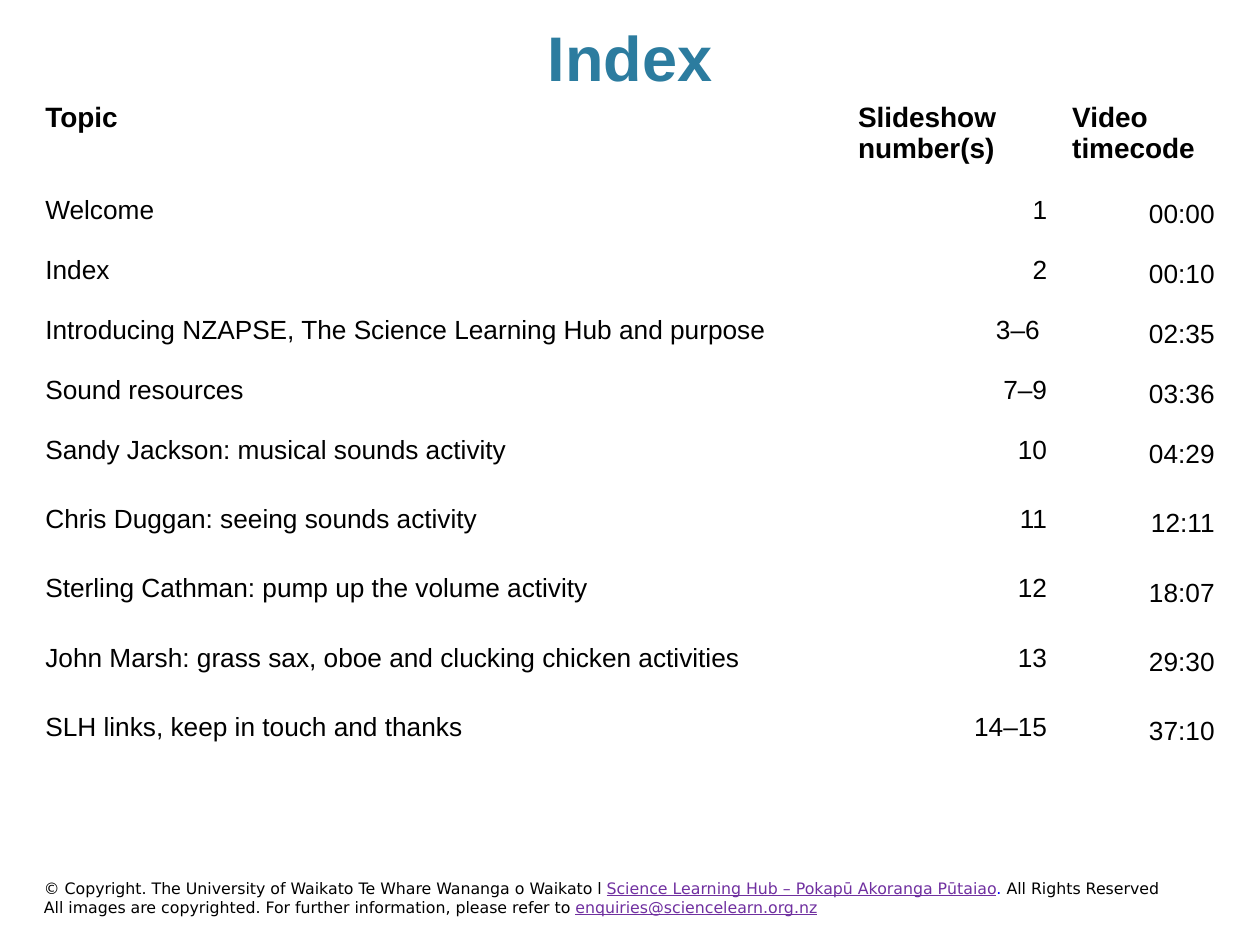
from dataclasses import dataclass

from pptx import Presentation
from pptx.dml.color import RGBColor
from pptx.enum.text import MSO_ANCHOR as Anchor, PP_ALIGN as Align
from pptx.util import Pt


@dataclass(frozen=True)
class Theme:
    font: str = "Arial"
    footer_font: str = "DejaVu Sans"
    title_color: RGBColor = RGBColor(0x2C, 0x7C, 0x9F)
    text_color: RGBColor = RGBColor(0, 0, 0)
    link_color: RGBColor = RGBColor(0x70, 0x30, 0xA0)
    stop_color: RGBColor = RGBColor(0, 0, 0xFF)
    title_size: float = 36
    header_size: float = 16
    body_size: float = 15
    footer_size: float = 9
    inset: float = 7.2


THEME = Theme()

HEADERS = ("Topic", "Slideshow number(s)", "Video timecode")
TOPICS = (
    ("Welcome", "1", "00:00"),
    ("Index", "2", "00:10"),
    ("Introducing NZAPSE, The Science Learning Hub and purpose", "3–6 ", "02:35"),
    ("Sound resources", "7–9", "03:36"),
    ("Sandy Jackson: musical sounds activity", "10", "04:29"),
    ("Chris Duggan: seeing sounds activity", "11", "12:11"),
    ("Sterling Cathman: pump up the volume activity", "12", "18:07"),
    ("John Marsh: grass sax, oboe and clucking chicken activities", "13", "29:30"),
    ("SLH links, keep in touch and thanks", "14–15", "37:10"),
)
EMPTY_ROWS = 2
COLUMN_WIDTHS = (464.4, 122.4, 95.76)
ROW_HEIGHTS = (53.3, *[34.3] * 4, *[39.6] * 6, 34.3)

FOOTER = (
    (
        ("© Copyright. The University of Waikato Te Whare Wananga o Waikato l ",
         THEME.text_color),
        ("Science Learning Hub – Pokapū Akoranga Pūtaiao", THEME.link_color),
        (". ", THEME.stop_color),
        ("All Rights Reserved", THEME.text_color),
    ),
    (
        ("All images are copyrighted. For further information, please refer to ",
         THEME.text_color),
        ("enquiries@sciencelearn.org.nz", THEME.link_color),
    ),
)


def set_font(font, name, size, color=None, bold=False):
    font.name, font.size, font.bold = name, Pt(size), bold
    if color is not None:
        font.color.rgb = color


def set_insets(target, inset):
    target.margin_left = target.margin_right = Pt(inset)
    target.margin_top = target.margin_bottom = Pt(inset)


def add_title(slide, left, top, width, height):
    title = slide.shapes.title
    title.left, title.top = Pt(left), Pt(top)
    title.width, title.height = Pt(width), Pt(height)
    title.text_frame.vertical_anchor = Anchor.MIDDLE
    title.text_frame.text = "Index"
    paragraph = title.text_frame.paragraphs[0]
    paragraph.alignment = Align.CENTER
    set_font(paragraph.font, THEME.font, THEME.title_size, THEME.title_color, True)


def add_index_table(slide, left, top):
    rows = (HEADERS, *TOPICS, *[("", "", "")] * EMPTY_ROWS)
    table = slide.shapes.add_table(
        len(rows), len(HEADERS), Pt(left), Pt(top),
        Pt(sum(COLUMN_WIDTHS)), Pt(sum(ROW_HEIGHTS))).table
    table.first_row = table.horz_banding = False
    for column, width in zip(table.columns, COLUMN_WIDTHS):
        column.width = Pt(width)
    for row, height in zip(table.rows, ROW_HEIGHTS):
        row.height = Pt(height)

    for row_index, texts in enumerate(rows):
        is_header = row_index == 0
        size = THEME.header_size if is_header else THEME.body_size
        for column_index, text in enumerate(texts):
            cell = table.cell(row_index, column_index)
            cell.fill.background()
            set_insets(cell, THEME.inset)
            cell.text = text
            paragraph = cell.text_frame.paragraphs[0]
            set_font(paragraph.font, THEME.font, size, THEME.text_color, is_header)
            # Numbers and timecodes sit on the right
            if column_index > 0 and not is_header:
                paragraph.alignment = Align.RIGHT
            if column_index == 2 and text and not is_header:
                paragraph.line_spacing = 1.15


def add_footer(slide, left, top, width, height):
    box = slide.shapes.add_textbox(Pt(left), Pt(top), Pt(width), Pt(height))
    frame = box.text_frame
    frame.word_wrap = True
    frame.vertical_anchor = Anchor.MIDDLE
    set_insets(frame, THEME.inset)
    for index, parts in enumerate(FOOTER):
        paragraph = frame.add_paragraph() if index else frame.paragraphs[0]
        set_font(paragraph.font, THEME.footer_font, THEME.footer_size)
        for text, color in parts:
            run = paragraph.add_run()
            run.text = text
            run.font.color.rgb = color
            run.font.underline = color == THEME.link_color


def main():
    presentation = Presentation()
    presentation.slide_width, presentation.slide_height = Pt(720), Pt(540)
    slide = presentation.slides.add_slide(presentation.slide_layouts[5])
    add_index_table(slide, 18.7, 51.1)
    add_footer(slide, 18, 496, 683.3, 33.8)
    add_title(slide, 36, 0, 648, 64.8)
    presentation.save("out.pptx")


if __name__ == "__main__":
    main()
